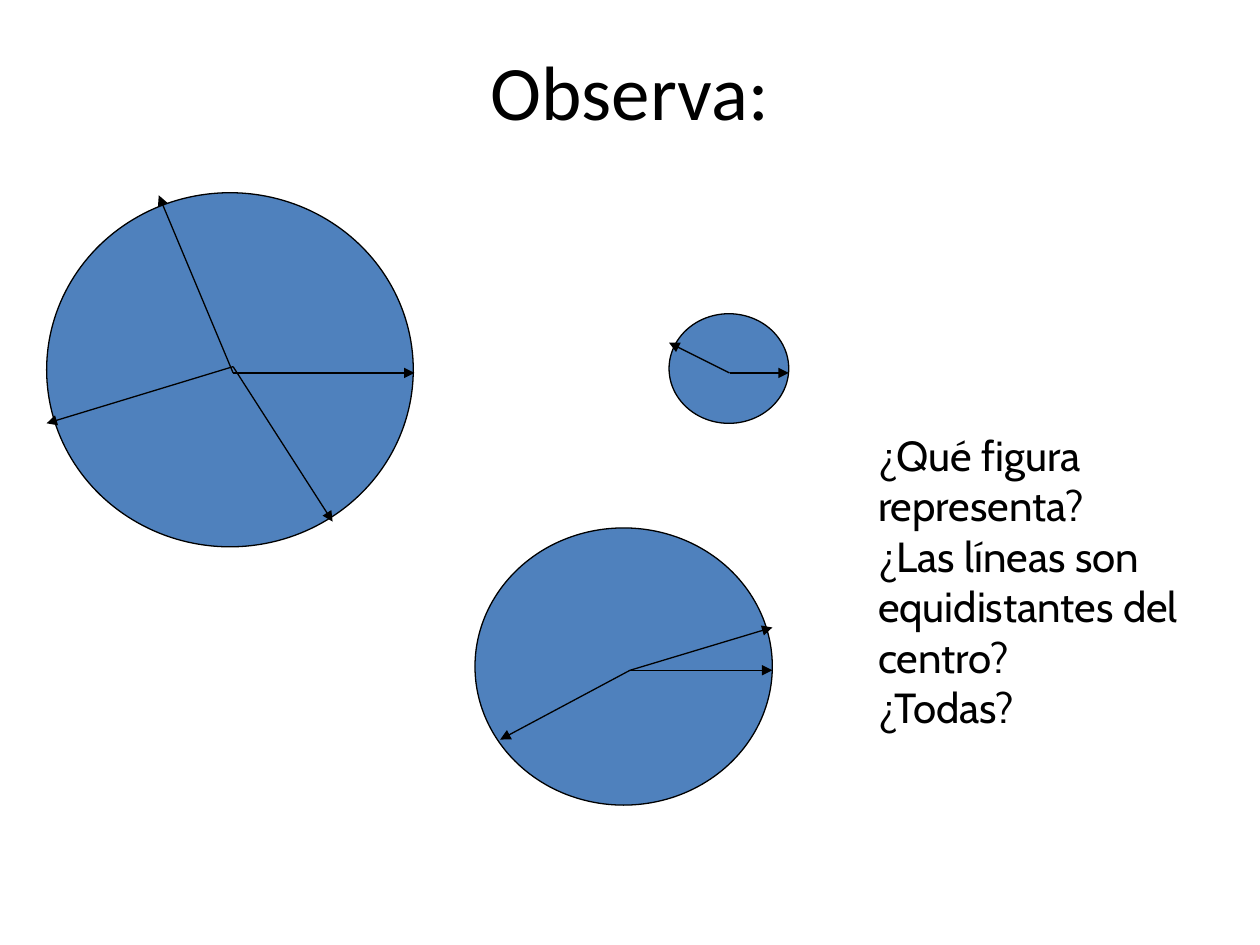
from lxml.etree import SubElement
from pptx import Presentation
from pptx.dml.color import RGBColor
from pptx.enum.shapes import MSO_CONNECTOR, MSO_SHAPE
from pptx.enum.text import MSO_ANCHOR, MSO_AUTO_SIZE, PP_ALIGN
from pptx.oxml.ns import qn
from pptx.util import Inches, Pt

BLACK = "000000"
BLUE = "4F81BD"

CIRCLES = [
    (0.37, 1.53, 2.91, 2.81),
    (5.31, 2.49, 0.95, 0.87),
    (3.77, 4.19, 2.36, 2.2),
]
RADII = {
    (1.85, 2.96): [(3.29, 2.96), (1.26, 1.55)],
    (1.85, 2.91): [(2.64, 4.14), (0.37, 3.36)],
    (5.79, 2.96): [(6.26, 2.96), (5.31, 2.72)],
    (5, 5.32): [(6.13, 5.32), (3.97, 5.87), (6.13, 4.98)],
}
QUESTIONS = [
    "¿Qué figura representa?",
    "¿Las líneas son equidistantes del centro?",
    "¿Todas?",
]


def color(hex_code):
    """Turn a hex string into a colour."""
    return RGBColor.from_string(hex_code)


def style_outline(outline):
    """Give an outline the thin black stroke of the figures."""
    outline.color.rgb = color(BLACK)
    outline.width = Pt(0.75)


def add_text(slide, box, lines, font, size, align=PP_ALIGN.LEFT, fit=MSO_AUTO_SIZE.NONE):
    """Add a wrapped text box with one paragraph per line."""
    frame = slide.shapes.add_textbox(*map(Inches, box)).text_frame
    frame.word_wrap = True
    frame.auto_size = fit
    frame.vertical_anchor = MSO_ANCHOR.TOP
    frame.text = "\n".join(lines)
    for paragraph in frame.paragraphs:
        paragraph.alignment = align
        for run in paragraph.runs:
            run.font.name = font
            run.font.size = Pt(size)
            run.font.color.rgb = color(BLACK)


def add_circle(slide, box):
    """Add a blue circle with a black outline."""
    circle = slide.shapes.add_shape(MSO_SHAPE.OVAL, *map(Inches, box))
    circle.shadow.inherit = False
    circle.fill.solid()
    circle.fill.fore_color.rgb = color(BLUE)
    style_outline(circle.line)


def add_radius(slide, center, rim):
    """Add an arrow from a center to a point on the rim."""
    radius = slide.shapes.add_connector(
        MSO_CONNECTOR.STRAIGHT, *map(Inches, center + rim)
    )
    style_outline(radius.line)
    SubElement(radius.line._get_or_add_ln(), qn("a:tailEnd"), type="triangle")
    SubElement(radius._element.spPr, qn("a:effectLst"))


def main():
    """Build the slide and save it."""
    deck = Presentation()
    deck.slide_width, deck.slide_height = Inches(10), Inches(7.5)
    slide = deck.slides.add_slide(deck.slide_layouts[6])

    add_text(slide, (0.5, 0.3, 9, 1.25), ["Observa:"], "Calibri", 44, align=PP_ALIGN.CENTER)
    for box in CIRCLES:
        add_circle(slide, box)
    for center, rims in RADII.items():
        for rim in rims:
            add_radius(slide, center, rim)
    add_text(slide, (6.87, 3.36, 2.98, 2.93), QUESTIONS, "Cabin", 24,
             fit=MSO_AUTO_SIZE.SHAPE_TO_FIT_TEXT)

    deck.save("out.pptx")


if __name__ == "__main__":
    main()
